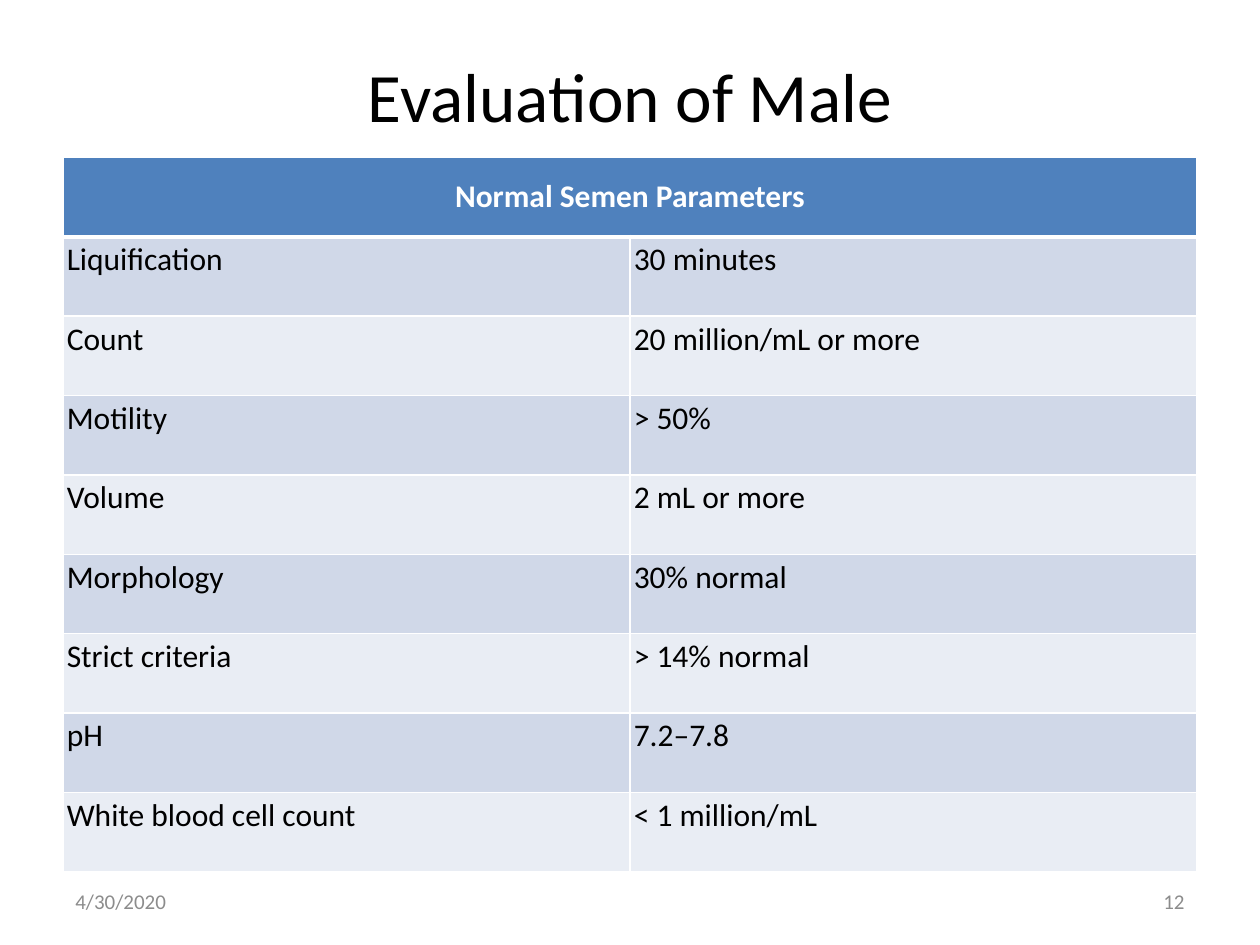
from lxml.etree import SubElement
from pptx import Presentation
from pptx.dml.color import RGBColor
from pptx.enum.text import MSO_ANCHOR as Anchor, MSO_AUTO_SIZE as AutoSize, PP_ALIGN as Align
from pptx.oxml.ns import qn
from pptx.util import Inches, Pt

FONT = "Calibri"
HEADER = "Normal Semen Parameters"
PARAMETERS = [
    ("Liquification", "30 minutes"),
    ("Count", "20 million/mL or more"),
    ("Motility", "> 50%"),
    ("Volume", "2 mL or more"),
    ("Morphology", "30% normal"),
    ("Strict criteria", "> 14% normal"),
    ("pH", "7.2–7.8"),
    ("White blood cell count", "< 1 million/mL"),
]
BANDS = ["D0D8E8", "E9EDF4"]


def rgb(value):
    return RGBColor.from_string(value)


def write(tf, text, size, color, align=Align.LEFT, bold=False):
    tf.text = text
    p = tf.paragraphs[0]
    p.alignment = align
    p.font.name = FONT
    p.font.size = Pt(size)
    p.font.bold = bold
    p.font.color.rgb = rgb(color)


def add_title(s, text):
    sp = s.shapes.title
    sp.left, sp.top, sp.width, sp.height = map(Inches, (0.5, 0.42, 9, 0.67))
    tf = sp.text_frame
    tf.auto_size = AutoSize.NONE
    tf.vertical_anchor = Anchor.MIDDLE
    write(tf, text, 39.6, "000000", Align.CENTER)


def set_borders(cell, top, bottom):
    tcPr = cell._tc.get_or_add_tcPr()
    for side, width in (("L", 1), ("R", 1), ("T", top), ("B", bottom)):
        ln = SubElement(tcPr, qn(f"a:ln{side}"), w=str(Pt(width)))
        fill = SubElement(ln, qn("a:solidFill"))
        SubElement(fill, qn("a:srgbClr"), val="FFFFFF")


def format_cell(cell, fill, margin, top=1, bottom=1):
    set_borders(cell, top, bottom)
    cell.fill.solid()
    cell.fill.fore_color.rgb = rgb(fill)
    cell.margin_left = cell.margin_right = Inches(margin)
    cell.margin_top = cell.margin_bottom = Inches(margin)


def add_parameter_table(s):
    rows = len(PARAMETERS) + 1
    table = s.shapes.add_table(
        rows, 2, Inches(0.5), Inches(1.25), Inches(9), Inches(0.63 * rows)
    ).table
    head = table.cell(0, 0)
    head.merge(table.cell(0, 1))
    for cell in table.rows[0].cells:
        format_cell(cell, "4F81BD", 0, bottom=3)
    head.vertical_anchor = Anchor.MIDDLE
    write(head.text_frame, HEADER, 18, "FFFFFF", Align.CENTER, True)
    for i, texts in enumerate(PARAMETERS):
        for j, text in enumerate(texts):
            cell = table.cell(i + 1, j)
            format_cell(cell, BANDS[i % 2], 0.03, top=1 if i else 3)
            write(cell.text_frame, text, 18, "000000")


def add_footer(s, text, left, align):
    sp = s.shapes.add_textbox(Inches(left), Inches(6.95), Inches(2.33), Inches(0.4))
    tf = sp.text_frame
    tf.word_wrap = True
    tf.vertical_anchor = Anchor.MIDDLE
    write(tf, text, 12, "8C8C8C", align)


def main():
    prs = Presentation()
    prs.slide_width, prs.slide_height = Inches(10), Inches(7.5)
    s = prs.slides.add_slide(prs.slide_layouts[5])
    add_title(s, "Evaluation of Male")
    add_parameter_table(s)
    add_footer(s, "12", 7.17, Align.RIGHT)
    add_footer(s, "4/30/2020", 0.5, Align.LEFT)
    prs.save("out.pptx")


if __name__ == "__main__":
    main()
